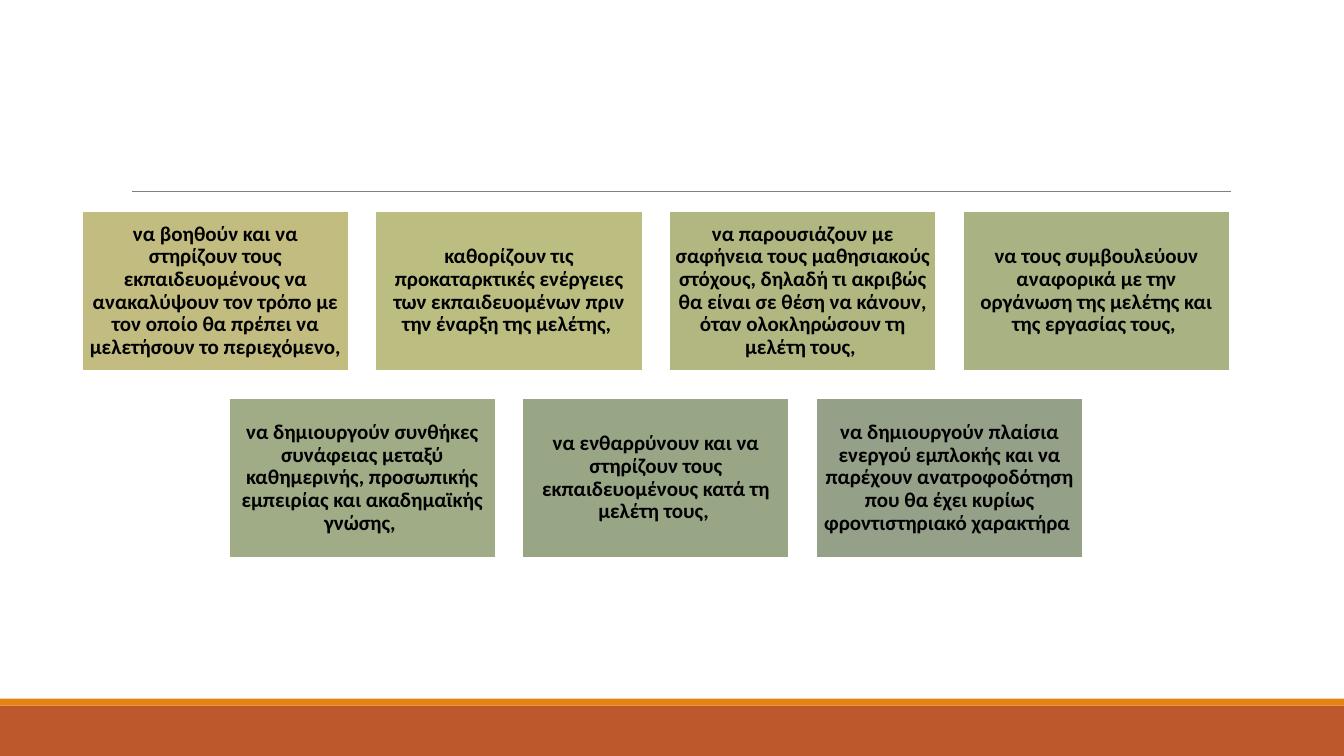
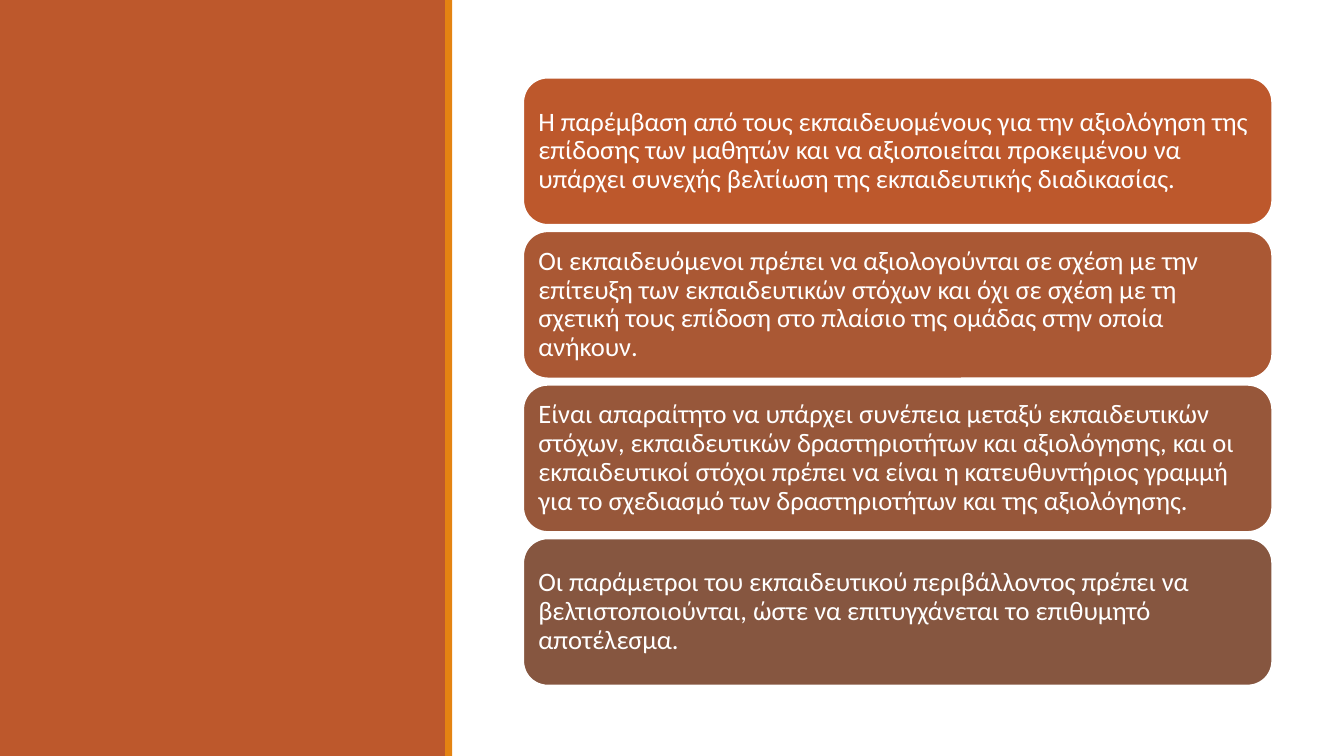
import pptx
import pptx.util
import pptx.dml.color
import pptx.enum.shapes
import pptx.enum.text
import pptx.oxml.ns
import lxml.etree

Pt = pptx.util.Pt
Shape = pptx.enum.shapes.MSO_SHAPE
Align = pptx.enum.text.PP_ALIGN
WIDE, HIGH = 960, 540
RUST, AMBER, GREY = "BD582C", "E48312", "808080"
WHITE, BLACK = "FFFFFF", "000000"
FONT = "Calibri"

TASKS = [
    ("C2BC80", "να βοηθούν και να στηρίζουν τους εκπαιδευομένους να ανακαλύψουν τον τρόπο με τον οποίο θα πρέπει να μελετήσουν το περιεχόμενο, "),
    ("BCBD81", "καθορίζουν τις προκαταρκτικές ενέργειες των εκπαιδευομένων πριν την έναρξη της μελέτης, "),
    ("B2B782", "να παρουσιάζουν με σαφήνεια τους μαθησιακούς στόχους, δηλαδή τι ακριβώς θα είναι σε θέση να κάνουν, όταν ολοκληρώσουν τη μελέτη τους, "),
    ("A8B283", "να τους συμβουλεύουν αναφορικά με την οργάνωση της μελέτης και της εργασίας τους, "),
    ("A0AC85", "να δημιουργούν συνθήκες συνάφειας μεταξύ καθημερινής, προσωπικής εμπειρίας και ακαδημαϊκής γνώσης, "),
    ("99A686", "να ενθαρρύνουν και να στηρίζουν τους εκπαιδευομένους κατά τη μελέτη τους, "),
    ("94A088", "να δημιουργούν πλαίσια ενεργού εμπλοκής και να παρέχουν ανατροφοδότηση που θα έχει κυρίως φροντιστηριακό χαρακτήρα "),
]
RULES = [
    ("BD582C", "Η παρέμβαση από τους εκπαιδευομένους για την αξιολόγηση της επίδοσης των μαθητών και να αξιοποιείται προκειμένου να υπάρχει συνεχής βελτίωση της εκπαιδευτικής διαδικασίας."),
    ("AA5834", "Οι εκπαιδευόμενοι πρέπει να αξιολογούνται σε σχέση με την επίτευξη των εκπαιδευτικών στόχων και όχι σε σχέση με τη σχετική τους επίδοση στο πλαίσιο της ομάδας στην οποία ανήκουν."),
    ("97573A", "Είναι απαραίτητο να υπάρχει συνέπεια μεταξύ εκπαιδευτικών στόχων, εκπαιδευτικών δραστηριοτήτων και αξιολόγησης, και οι εκπαιδευτικοί στόχοι πρέπει να είναι η κατευθυντήριος γραμμή για το σχεδιασμό των δραστηριοτήτων και της αξιολόγησης."),
    ("865640", "Οι παράμετροι του εκπαιδευτικού περιβάλλοντος πρέπει να βελτιστοποιούνται, ώστε να επιτυγχάνεται το επιθυμητό αποτέλεσμα."),
]


def paint(target, color):
    if hasattr(target, "solid"):
        target.solid()
        target.fore_color.rgb = pptx.dml.color.RGBColor.from_string(color)
    else:
        target.rgb = pptx.dml.color.RGBColor.from_string(color)


def block(slide, box, color, kind=Shape.RECTANGLE):
    shape = slide.shapes.add_shape(kind, *map(Pt, box))
    shape.shadow.inherit = False
    paint(shape.fill, color)
    shape.line.fill.background()
    return shape


def card(slide, box, color, text, kind, size, ink, bold, align, inset):
    shape = block(slide, box, color, kind)
    paint(shape.line.fill, WHITE)
    shape.line.width = Pt(1.25)
    frame = shape.text_frame
    frame.text = text
    frame.word_wrap = True
    frame.vertical_anchor = pptx.enum.text.MSO_ANCHOR.MIDDLE
    frame.margin_left = frame.margin_right = Pt(inset)
    frame.margin_top = frame.margin_bottom = Pt(inset)
    para = frame.paragraphs[0]
    para.alignment = align
    para.line_spacing = 0.9
    font = para.runs[0].font
    font.name, font.size, font.bold = FONT, Pt(size), bold
    paint(font.color, ink)


def rule(slide, left, top, width):
    line = slide.shapes.add_connector(
        pptx.enum.shapes.MSO_CONNECTOR.STRAIGHT,
        Pt(left), Pt(top), Pt(left + width), Pt(top))
    paint(line.line.fill, GREY)
    line.line.width = Pt(0.5)
    props = line._element.spPr
    lxml.etree.SubElement(props, pptx.oxml.ns.qn("a:effectLst"))


def footer(slide, box):
    left, top, width, height = box
    edge = 5
    block(slide, (left, top + edge, width, height - edge), RUST)
    block(slide, (left, top, width, edge), AMBER)


def sidebar(slide, box):
    left, top, width, height = box
    edge = 5
    block(slide, (left, top, width - edge, height), RUST)
    block(slide, (left + width - edge, top, edge, height), AMBER)


def grid(slide, box, items, cols):
    left, top, width = box
    wide = width / (cols + 0.1 * (cols - 1))
    gap, high = 0.1 * wide, 0.6 * wide
    for start in range(0, len(items), cols):
        row = items[start:start + cols]
        used = len(row) * (wide + gap) - gap
        x = left + (width - used) / 2
        y = top + start // cols * (high + gap)
        for i, (color, text) in enumerate(row):
            card(slide, (x + i * (wide + gap), y, wide, high), color, text,
                 Shape.RECTANGLE, 15, BLACK, True, Align.CENTER, 4.5)


def stack(slide, box, items, gap):
    left, top, width, height = box
    high = (height - gap * (len(items) - 1)) / len(items)
    for i, (color, text) in enumerate(items):
        card(slide, (left, top + i * (high + gap), width, high), color, text,
             Shape.ROUNDED_RECTANGLE, 19, WHITE, False, Align.LEFT, 5.7)


def main():
    deck = pptx.Presentation()
    deck.slide_width, deck.slide_height = Pt(WIDE), Pt(HIGH)
    blank = deck.slide_layouts[6]

    slide = deck.slides.add_slide(blank)
    footer(slide, (0, 499, WIDE, 41))
    rule(slide, 94.5, 136.5, 784.5)
    grid(slide, (58.5, 150.75, 820), TASKS, 4)

    slide = deck.slides.add_slide(blank)
    sidebar(slide, (0, 0, 323, HIGH))
    stack(slide, (373.75, 55.5, 535, 434.2), RULES, 4.6)

    deck.save("out.pptx")


if __name__ == "__main__":
    main()
